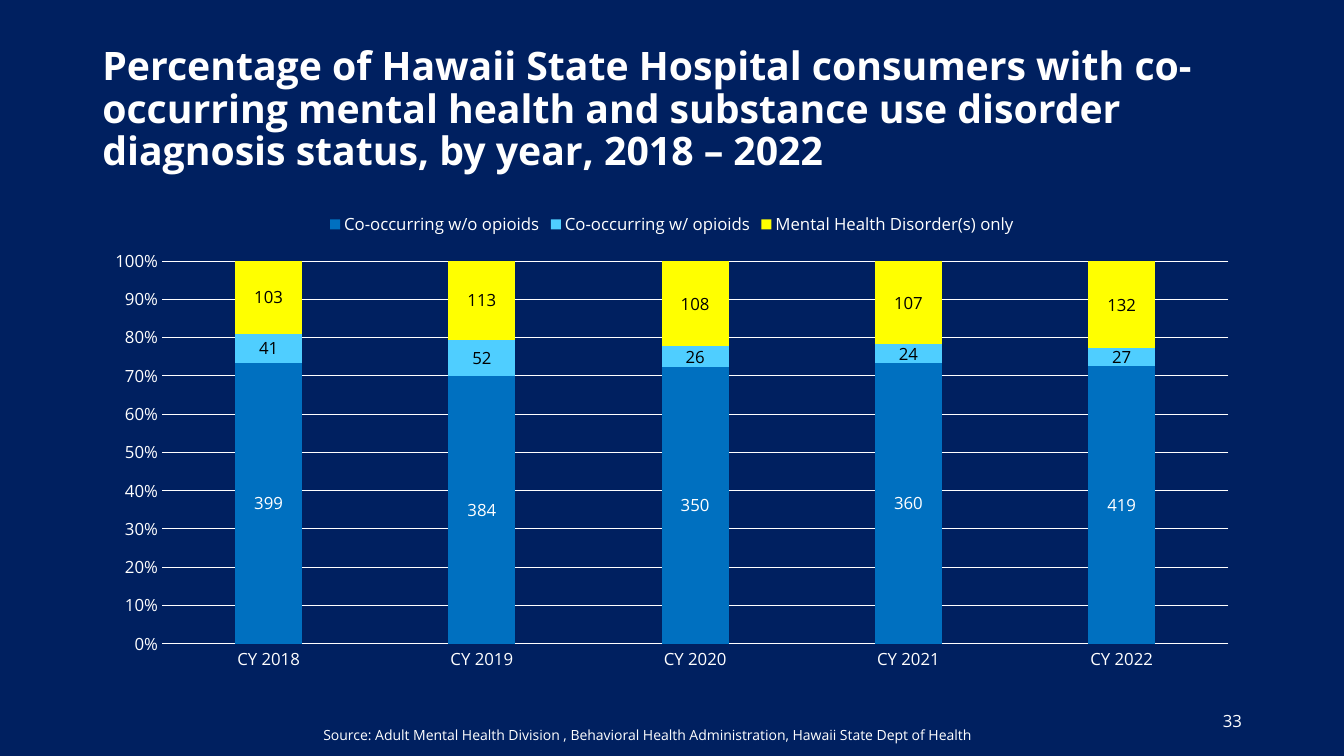
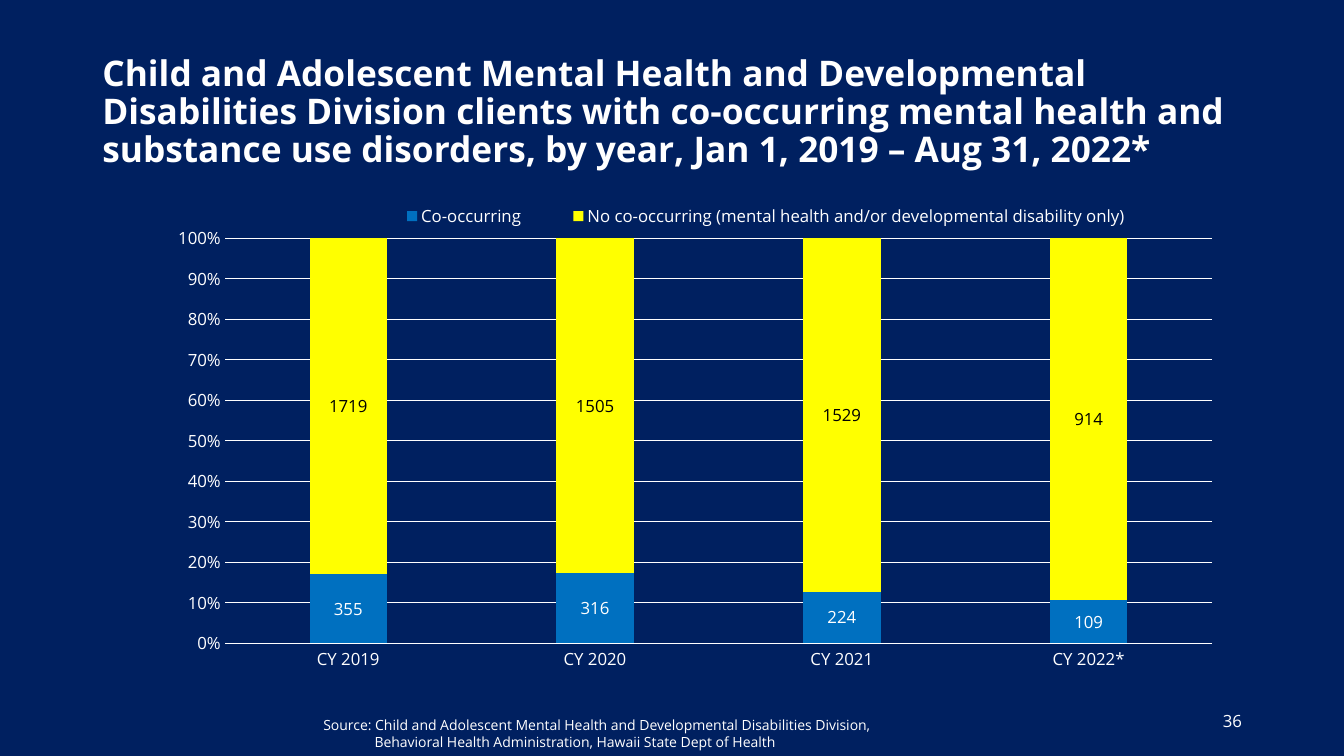
"""Builds two stacked-percentage chart slides on co-occurring disorders."""
from dataclasses import dataclass

from lxml.etree import SubElement
from pptx import Presentation
from pptx.chart.data import CategoryChartData
from pptx.dml.color import RGBColor
from pptx.enum.chart import XL_CHART_TYPE as ChartType
from pptx.enum.chart import XL_LABEL_POSITION as LabelPosition
from pptx.enum.chart import XL_LEGEND_POSITION as LegendPosition
from pptx.enum.chart import XL_TICK_MARK as TickMark
from pptx.enum.text import MSO_ANCHOR as Anchor
from pptx.enum.text import PP_ALIGN as Align
from pptx.oxml import parse_xml
from pptx.oxml.ns import nsdecls, qn
from pptx.util import Cm, Pt


@dataclass(frozen=True)
class Theme:
    font: str = "Open Sans"
    navy: str = "002060"
    white: str = "FFFFFF"
    black: str = "000000"
    blue: str = "0070C0"
    sky: str = "4FCEFF"
    yellow: str = "FFFF00"
    body_size: float = 12
    source_size: float = 10
    line_width: float = 0.75


THEME = Theme()
PAGE = (33.87, 19.05)
NUMBER_BOX = (23.93, 17.65, 7.62, 1.02)

SLIDES = [
    {
        "title": "Percentage of Hawaii State Hospital consumers with co-occurring mental health "
                 "and substance use disorder diagnosis status, by year, 2018 – 2022",
        "title_size": 28,
        "title_box": (2.33, 0.94, 29.21, 3.68),
        "number": "33",
        "chart_box": (2.33, 5.08, 29.21, 12.09),
        "plot_layout": (0.06, 0.124, 0.92, 0.798),
        "legend_layout": None,
        "categories": ["CY 2018", "CY 2019", "CY 2020", "CY 2021", "CY 2022"],
        "series": [
            ("Co-occurring w/o opioids", [399, 384, 350, 360, 419], THEME.blue, THEME.white),
            ("Co-occurring w/ opioids", [41, 52, 26, 24, 27], THEME.sky, THEME.black),
            ("Mental Health Disorder(s) only", [103, 113, 108, 107, 132],
             THEME.yellow, THEME.black),
        ],
        "source": ["Source: Adult Mental Health Division , Behavioral Health Administration, "
                   "Hawaii State Dept of Health"],
        "source_box": (7.9, 18.19, 19.15, 0.69),
    },
    {
        "title": "Child and Adolescent Mental Health and Developmental Disabilities Division "
                 "clients with co-occurring mental health and substance use disorders, by year, "
                 "Jan 1, 2019 – Aug 31, 2022*",
        "title_size": 25.2,
        "title_box": (2.33, 1.02, 29.21, 3.68),
        "number": "36",
        "chart_box": (2.92, 5.05, 28.02, 12.27),
        "plot_layout": (0.098, 0.078, 0.888, 0.832),
        "legend_layout": (0.22, 0.005, 0.73, 0.055),
        "categories": ["CY 2019", "CY 2020", "CY 2021", "CY 2022*"],
        "series": [
            ("Co-occurring", [355, 316, 224, 109], THEME.blue, THEME.white),
            ("No co-occurring (mental health and/or developmental disability only)",
             [1719, 1505, 1529, 914], THEME.yellow, THEME.black),
        ],
        "source": ["Source: Child and Adolescent Mental Health and Developmental "
                   "Disabilities Division,",
                   "Behavioral Health Administration, Hawaii State Dept of Health"],
        "source_box": (7.9, 17.93, 22.23, 1.12),
    },
]


def style_font(font, size=THEME.body_size, color=THEME.white, bold=False):
    font.name = THEME.font
    font.size = Pt(size)
    font.bold = bold
    font.color.rgb = RGBColor.from_string(color)


def style_line(line):
    line.color.rgb = RGBColor.from_string(THEME.white)
    line.width = Pt(THEME.line_width)


def add_text(slide, lines, box, size=THEME.body_size, bold=False, align=Align.LEFT,
             anchor=Anchor.TOP, spacing=1.0, hanging=0):
    frame = slide.shapes.add_textbox(*map(Cm, box)).text_frame
    frame.word_wrap = True
    frame.vertical_anchor = anchor
    for index, line in enumerate(lines):
        paragraph = frame.add_paragraph() if index else frame.paragraphs[0]
        if index and hanging:
            paragraph._p.get_or_add_pPr().set("marL", str(Cm(hanging)))
        paragraph.alignment = align
        paragraph.line_spacing = spacing
        run = paragraph.add_run()
        run.text = line
        style_font(run.font, size=size, bold=bold)


def set_layout(element, index, area, inner=False):
    for previous in element.findall(qn("c:layout")):
        element.remove(previous)
    layout = parse_xml(f"<c:layout {nsdecls('c')}><c:manualLayout/></c:layout>")
    settings = [("layoutTarget", "inner")] if inner else []
    settings += [("xMode", "edge"), ("yMode", "edge"), *zip("xywh", area)]
    for name, value in settings:
        SubElement(layout[0], qn(f"c:{name}")).set("val", str(value))
    element.insert(index, layout)


def style_axes(chart):
    for axis in (chart.category_axis, chart.value_axis):
        axis.major_tick_mark = axis.minor_tick_mark = TickMark.NONE
        style_font(axis.tick_labels.font)
    style_line(chart.category_axis.format.line)
    value_axis = chart.value_axis
    value_axis.minimum_scale, value_axis.maximum_scale = 0, 1
    value_axis.major_unit = 0.1
    value_axis.format.line.fill.background()
    value_axis.has_major_gridlines = True
    style_line(value_axis.major_gridlines.format.line)
    value_axis.tick_labels.number_format = "0%"
    value_axis.tick_labels.number_format_is_linked = False


def add_stacked_chart(slide, content):
    data = CategoryChartData()
    data.categories = content["categories"]
    for name, values, _, _ in content["series"]:
        data.add_series(name, values)
    chart = slide.shapes.add_chart(ChartType.COLUMN_STACKED_100,
                                   *map(Cm, content["chart_box"]), data).chart
    chart.has_title = False
    style_font(chart.font)
    style_axes(chart)

    plot = chart.plots[0]
    plot.gap_width, plot.overlap = 219, 100
    plot.vary_by_categories = False
    for series, (_, _, fill, label_color) in zip(plot.series, content["series"]):
        series.format.fill.solid()
        series.format.fill.fore_color.rgb = RGBColor.from_string(fill)
        labels = series.data_labels
        labels.show_value = True
        labels.position = LabelPosition.CENTER
        style_font(labels.font, color=label_color)

    chart.has_legend = True
    legend = chart.legend
    legend.position = LegendPosition.TOP
    legend.include_in_layout = False
    style_font(legend.font)
    set_layout(chart._chartSpace.chart.plotArea, 0, content["plot_layout"], inner=True)
    if content["legend_layout"]:
        set_layout(legend._element, 1, content["legend_layout"])


def add_chart_slide(presentation, content):
    slide = presentation.slides.add_slide(presentation.slide_layouts[6])
    background = slide.background.fill
    background.solid()
    background.fore_color.rgb = RGBColor.from_string(THEME.navy)
    add_text(slide, [content["title"]], content["title_box"], size=content["title_size"],
             bold=True, anchor=Anchor.MIDDLE, spacing=0.9)
    add_text(slide, [content["number"]], NUMBER_BOX, align=Align.RIGHT, anchor=Anchor.MIDDLE)
    add_stacked_chart(slide, content)
    add_text(slide, content["source"], content["source_box"], size=THEME.source_size,
             hanging=1.29)


def main():
    presentation = Presentation()
    presentation.slide_width, presentation.slide_height = map(Cm, PAGE)
    for content in SLIDES:
        add_chart_slide(presentation, content)
    presentation.save("out.pptx")


if __name__ == "__main__":
    main()
